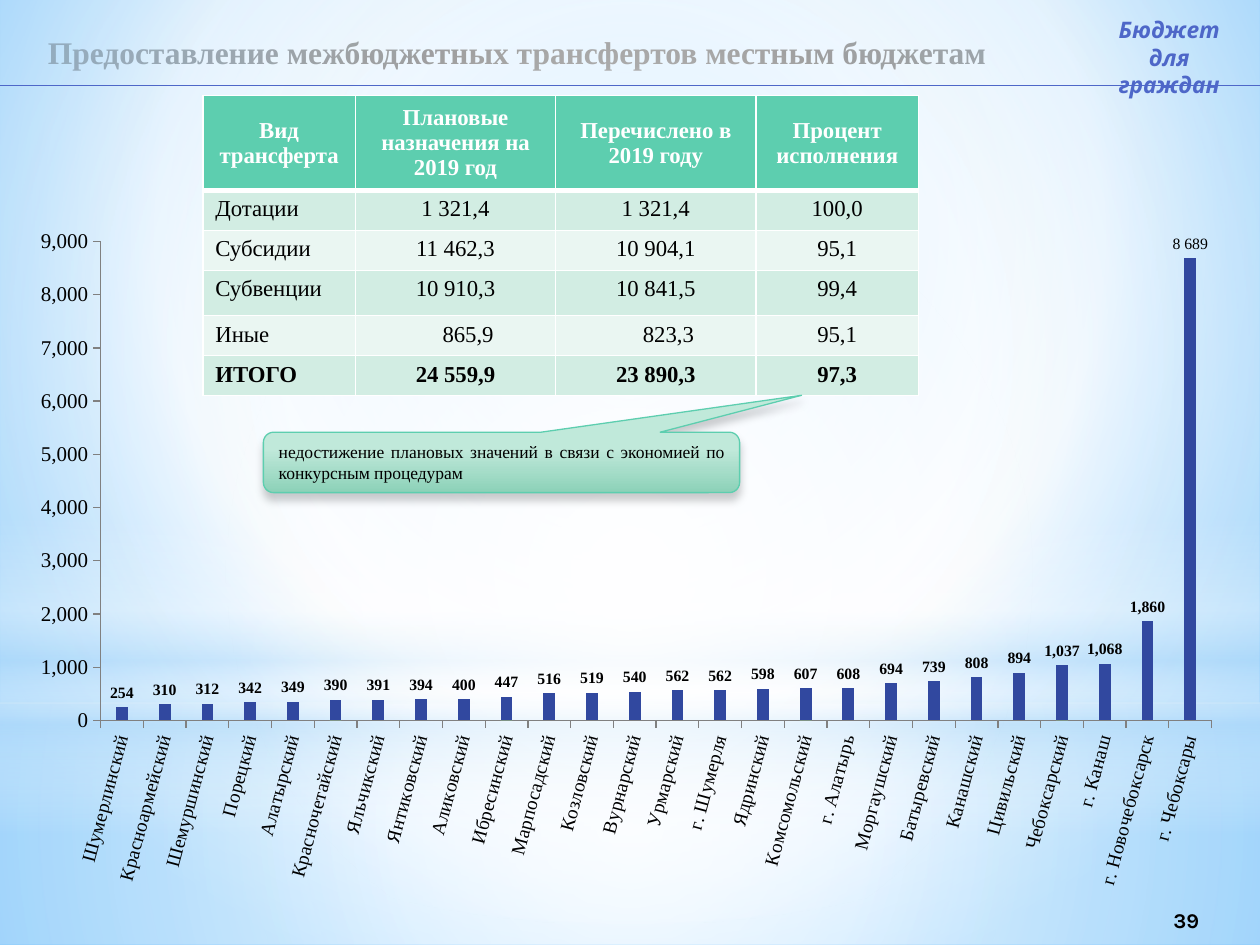
from lxml import etree
from pptx import Presentation
from pptx.chart.data import CategoryChartData
from pptx.dml.color import RGBColor
from pptx.enum.chart import XL_CHART_TYPE, XL_LABEL_POSITION, XL_TICK_MARK
from pptx.enum.shapes import MSO_CONNECTOR, MSO_SHAPE
from pptx.enum.text import MSO_ANCHOR, PP_ALIGN
from pptx.oxml import parse_xml
from pptx.oxml.ns import nsdecls, qn
from pptx.util import Inches, Pt

LEFT, MID, JUST = PP_ALIGN.LEFT, PP_ALIGN.CENTER, PP_ALIGN.JUSTIFY
TOP, HALF = MSO_ANCHOR.TOP, MSO_ANCHOR.MIDDLE
RECT, OVAL = MSO_SHAPE.RECTANGLE, MSO_SHAPE.OVAL
CALL = MSO_SHAPE.ROUNDED_RECTANGULAR_CALLOUT
COLS, ROWS = 100, 75
SERIF, SANS = "Times New Roman", "Karla"
HEX = {"black": "000000", "white": "FFFFFF", "pale": "B4DCFA", "brand": "4E67C8",
       "head": "5DCEAF", "odd": "D2EDE3", "even": "EAF6F2", "bar": "31489F",
       "cyan": "5ECCF3", "lime": "A7EA52", "axis": "808080"}
RGB = {name: RGBColor.from_string(code) for name, code in HEX.items()}

deck = Presentation()
deck.slide_width, deck.slide_height = Inches(10), Inches(7.5)
col, row = deck.slide_width / COLS, deck.slide_height / ROWS
slide = deck.slides.add_slide(deck.slide_layouts[5])
shapes = slide.shapes


def shade(node, stops, to=None):
    """Swap a solid fill for a gradient: round the rectangle `to`, or downward."""
    marks = "".join(
        f'<a:gs pos="{pos * 1000}"><a:srgbClr val="{code}">'
        f'<a:alpha val="{alpha * 1000}"/></a:srgbClr></a:gs>' for pos, code, alpha in stops)
    form = '<a:lin ang="5400000" scaled="0"/>'
    if to:
        sides = " ".join(f'{side}="{part * 1000}"' for side, part in zip("ltrb", to))
        form = f'<a:path path="circle"><a:fillToRect {sides}/></a:path>'
    fill = parse_xml(f'<a:gradFill {nsdecls("a")} rotWithShape="1">'
                     f'<a:gsLst>{marks}</a:gsLst>{form}</a:gradFill>')
    node.replace(node.find(qn("a:solidFill")), fill)


def write(frame, lines, align, anchor, **form):
    frame.word_wrap, frame.vertical_anchor = True, anchor
    frame.text = "\n".join(lines)
    for para in frame.paragraphs:
        para.alignment = align
        para.font.color.rgb = RGB[form.get("ink", "black")]
        for key, val in form.items():
            if key != "ink":
                setattr(para.font, key, val)


# Backdrop
slide.background.fill.solid()
shade(slide.element.xpath(".//p:bgPr")[0],
      [(0, "9ED5FF", 100), (60, HEX["white"], 100), (100, "5BB9FF", 100)], (20, 10, 20, 60))
white, pale, core = HEX["white"], HEX["pale"], (50, 50, 50, 50)
layers = [
    (RECT, 55.8, 19.2, [(0, white, 91), (37, white, 76), (100, pale, 79)], core),
    (RECT, 0, 55.8, [(0, white, 89), (48, white, 62), (100, pale, 79)], core),
    (RECT, 41.2, 25, [(0, white, 0), (29, white, 30), (45, pale, 40),
                      (55, white, 26), (65, pale, 60), (100, white, 0)], None),
    (OVAL, 17.5, 55.8, [(0, white, 100), (56, white, 0)], core),
]
for kind, y, h, stops, to in layers:
    layer = shapes.add_shape(kind, 0, int(y * row), deck.slide_width, int(h * row))
    layer.shadow.inherit = False
    layer.line.fill.background()
    layer.fill.solid()
    shade(layer.element.spPr, stops, to)

# Title, rule, page number and corner mark
title = shapes.title
title.left, title.top = int(2.8 * col), int(2.1 * row)
title.width, title.height = int(80.2 * col), int(5.5 * row)
write(title.text_frame, ["Предоставление межбюджетных трансфертов местным бюджетам"],
      LEFT, TOP, name=SERIF, size=Pt(18), bold=True)
rule = shapes.add_connector(MSO_CONNECTOR.STRAIGHT, 0, int(6.8 * row),
                            deck.slide_width, int(6.8 * row))
rule.line.color.rgb, rule.line.width = RGB["brand"], Pt(0.75)
etree.SubElement(rule.element.spPr, qn("a:effectLst"))
page = shapes.add_textbox(int(88.4 * col), int(71 * row), int(11.5 * col), int(4 * row))
write(page.text_frame, ["39"], MID, HALF, name=SANS, size=Pt(12), bold=True)
mark = shapes.add_textbox(int(86.1 * col), int(0.8 * row), int(13.4 * col), int(5.4 * row))
write(mark.text_frame, ["Бюджет", "для граждан"], MID, TOP, name=SANS, size=Pt(13),
      bold=True, italic=True, ink="brand")

# Transfers by district
sums = {
    "Шумерлинский": 254, "Красноармейский": 310, "Шемуршинский": 312, "Порецкий": 342,
    "Алатырский": 349, "Красночетайский": 390, "Яльчикский": 391, "Янтиковский": 394,
    "Аликовский": 400, "Ибресинский": 447, "Марпосадский": 516, "Козловский": 519,
    "Вурнарский": 540, "Урмарский": 562, "г. Шумерля": 562, "Ядринский": 598,
    "Комсомольский": 607, "г. Алатырь": 608, "Моргаушский": 694, "Батыревский": 739,
    "Канашский": 808, "Цивильский": 894, "Чебоксарский": 1037, "г. Канаш": 1068,
    "г. Новочебоксарск": 1860, "г. Чебоксары": 8689,
}
zeros = [0 if i in (5, 9, 16, 22) else None for i in range(len(sums))]
data = CategoryChartData()
data.categories = list(sums)
for name, vals in (("Series 1", sums.values()), ("Series 2", zeros), ("Series 3", zeros)):
    data.add_series(name, vals)
chart = shapes.add_chart(XL_CHART_TYPE.COLUMN_CLUSTERED, int(1.2 * col), int(17 * row),
                         int(96.9 * col), int(54.3 * row), data).chart
chart.has_title = chart.has_legend = False
chart.font.name, chart.font.size = SANS, Pt(18)
plot = chart.plots[0]
plot.gap_width, plot.overlap, plot.vary_by_categories = 262, 100, False
for series, ink in zip(plot.series, ("bar", "cyan", "lime")):
    series.format.fill.solid()
    series.format.fill.fore_color.rgb = RGB[ink]
    series.invert_if_negative = False

labels = plot.series[0].data_labels
labels.show_value, labels.position = True, XL_LABEL_POSITION.OUTSIDE_END
labels.number_format, labels.number_format_is_linked = "#,##0", False
labels.font.name, labels.font.size, labels.font.bold = SERIF, Pt(9), True
labels.font.color.rgb = RGB["black"]
peak = plot.series[0].points[len(sums) - 1].data_label
write(peak.text_frame, ["8 689"], MID, HALF, name=SERIF, size=Pt(9), bold=False)
peak.position = XL_LABEL_POSITION.OUTSIDE_END

for axis, size in ((chart.category_axis, 11), (chart.value_axis, 12)):
    axis.has_major_gridlines = False
    axis.major_tick_mark, axis.minor_tick_mark = XL_TICK_MARK.OUTSIDE, XL_TICK_MARK.NONE
    axis.format.line.color.rgb = RGB["axis"]
    font = axis.tick_labels.font
    font.name, font.size, font.color.rgb = SERIF, Pt(size), RGB["black"]
scale = chart.value_axis
scale.minimum_scale, scale.maximum_scale, scale.major_unit = 0, 9000, 1000
scale.tick_labels.number_format, scale.tick_labels.number_format_is_linked = "#,##0", False
chart.element.xpath(".//c:catAx/c:txPr/a:bodyPr")[0].set("rot", "-4500000")
area = chart.element.xpath(".//c:plotArea")[0]
for old in area.findall(qn("c:layout")):
    area.remove(old)
spots = "".join(f'<c:{key} val="{val}"/>' for key, val in (
    ("layoutTarget", "inner"), ("xMode", "edge"), ("yMode", "edge"),
    ("x", 0.07), ("y", 0.04), ("w", 0.91), ("h", 0.7)))
area.insert(0, parse_xml(f'<c:layout {nsdecls("c")}><c:manualLayout>{spots}'
                         '</c:manualLayout></c:layout>'))

# Plan and payment table
rows = [
    ("Вид трансферта", "Плановые назначения на 2019 год", "Перечислено в 2019 году",
     "Процент исполнения"),
    ("Дотации", "1 321,4", "1 321,4", "100,0"),
    ("Субсидии", "11 462,3", "10 904,1", "95,1"),
    ("Субвенции", "10 910,3", "10 841,5", "99,4"),
    ("Иные", "865,9", "823,3", "95,1"),
    ("ИТОГО", "24 559,9", "23 890,3", "97,3"),
]
widths, heights = (12.1, 15.9, 15.9, 12.9), (7.5, 3.15, 3.15, 3.6, 3.15, 3.15)
table = shapes.add_table(len(rows), len(widths), int(16.1 * col), int(7.6 * row),
                         int(sum(widths) * col), int(sum(heights) * row)).table
for part, w in zip(table.columns, widths):
    part.width = int(w * col)
for r, (texts, h) in enumerate(zip(rows, heights)):
    table.rows[r].height = int(h * row)
    for c, text in enumerate(texts):
        cell = table.cell(r, c)
        head = r == 0
        write(cell.text_frame, [text], MID if head or c else LEFT, None, name=SERIF,
              size=Pt(13), bold=r in (0, 5), ink="white" if head else "black")
        cell.vertical_anchor = HALF if head else TOP
        if text in ("865,9", "823,3"):
            cell.margin_left = int(3 * col)
        cell.fill.solid()
        cell.fill.fore_color.rgb = RGB["head" if head else "odd" if r % 2 else "even"]
        for i, side in enumerate("LRTB"):
            thick = 3 if (head and side == "B") or (r == 1 and side == "T") else 1
            cell._tc.tcPr.insert(i, parse_xml(
                f'<a:ln{side} {nsdecls("a")} w="{Pt(thick)}"><a:solidFill>'
                f'<a:srgbClr val="{white}"/></a:solidFill></a:ln{side}>'))

# Callout to the total
note = shapes.add_shape(CALL, int(20.9 * col), int(34.3 * row), int(37.8 * col), int(4.8 * row))
for i, val in enumerate((0.63, -1.11, 0.17)):
    note.adjustments[i] = val
note.line.color.rgb, note.line.width = RGB["head"], Pt(0.75)
note.fill.solid()
shade(note.element.spPr, [(28, "C0E9DA", 100), (100, "8CD1B8", 100)])
note.shadow.inherit = False
note.element.spPr.find(qn("a:effectLst")).append(parse_xml(
    f'<a:outerShdw {nsdecls("a")} blurRad="{Pt(5)}" dist="{Pt(4)}" dir="5400000" '
    f'rotWithShape="0"><a:srgbClr val="{HEX["black"]}"><a:alpha val="20000"/>'
    '</a:srgbClr></a:outerShdw>'))
write(note.text_frame,
      ["недостижение плановых значений в связи с экономией по конкурсным процедурам"],
      JUST, HALF, name=SERIF, size=Pt(10))

deck.save("out.pptx")
